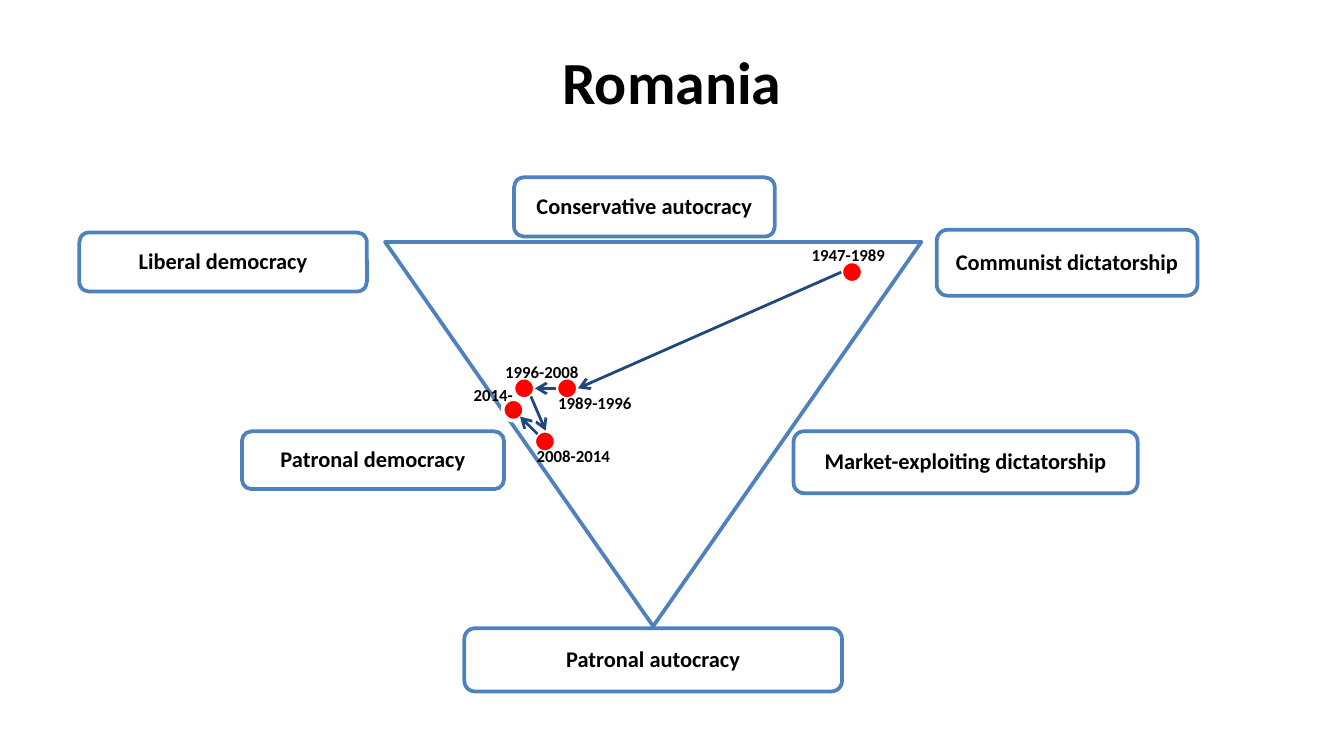
from lxml.etree import SubElement
from pptx import Presentation
from pptx.dml.color import RGBColor
from pptx.enum.shapes import MSO_CONNECTOR, MSO_SHAPE as SHAPE
from pptx.enum.text import MSO_ANCHOR as ANCHOR, MSO_AUTO_SIZE as AUTO, PP_ALIGN as ALIGN
from pptx.oxml.ns import qn
from pptx.util import Pt

PX = 4572
COLORS = {"ink": "000000", "paper": "FFFFFF", "frame": "4F81BD", "dot": "FF0000", "arrow": "1F497D"}
REGIMES = [
    ("Communist dictatorship", 1394, 342, 388, 98),
    ("Liberal democracy", 118, 346, 428, 88),
    ("Patronal autocracy", 691, 935, 562, 94),
    ("Conservative autocracy", 765, 264, 388, 88),
    ("Market-exploiting dictatorship", 1181, 642, 512, 92),
    ("Patronal democracy", 360, 642, 390, 86),
]
DOTS = [(1252, 389), (828, 562), (764, 562), (795, 641), (748, 594)]
MOVES = [
    (1252, 405, 860, 578),
    (828, 578, 796, 578),
    (790, 590, 812, 641),
    (800, 646, 774, 620),
]
PERIODS = [
    ("1947-1989", 1188, 354),
    ("1989-1996", 811, 575),
    ("1996-2008", 732, 528),
    ("2014-", 685, 563),
    ("2008-2014", 779, 654),
]


def emu(*lengths):
    return [n * PX for n in lengths]


def rgb(name):
    return RGBColor.from_string(COLORS[name])


def write(tf, text, size=12, align=ALIGN.CENTER, anchor=ANCHOR.MIDDLE, inset=None, spacing=None):
    tf.word_wrap = True
    tf.vertical_anchor = anchor
    if inset is not None:
        tf.margin_left = tf.margin_right = tf.margin_top = tf.margin_bottom = inset * PX
    p = tf.paragraphs[0]
    p.alignment = align
    p.line_spacing = spacing
    r = p.add_run()
    r.text = text
    r.font.name, r.font.size, r.font.bold = "Calibri", Pt(size), True
    r.font.color.rgb = rgb("ink")


class Diagram:
    """Style and current slide, with one method per kind of element."""

    def __init__(self, prs):
        self.s = prs.slides.add_slide(prs.slide_layouts[5])

    def title(self, text, x, y, w, h):
        sp = self.s.shapes.title
        sp.left, sp.top, sp.width, sp.height = emu(x, y, w, h)
        write(sp.text_frame, text, size=32)

    def shape(self, kind, x, y, w, h, fill=None, line="frame"):
        sp = self.s.shapes.add_shape(kind, *emu(x, y, w, h))
        sp.shadow.inherit = False
        if fill:
            sp.fill.solid()
            sp.fill.fore_color.rgb = rgb(fill)
        else:
            sp.fill.background()
        sp.line.color.rgb = rgb(line)
        sp.line.width = Pt(2)
        return sp

    def triangle(self, x, y, w, h):
        self.shape(SHAPE.ISOSCELES_TRIANGLE, x, y, w, h).rotation = 180

    def box(self, text, x, y, w, h):
        sp = self.shape(SHAPE.ROUNDED_RECTANGLE, x, y, w, h, fill="paper")
        color = sp.element.spPr.find(qn("a:solidFill"))[0]
        SubElement(color, qn("a:alpha"), val="90000")
        write(sp.text_frame, text, inset=10, spacing=0.9)

    def dot(self, x, y):
        self.shape(SHAPE.OVAL, x, y, 32, 32, fill="dot", line="paper")

    def arrow(self, x1, y1, x2, y2):
        c = self.s.shapes.add_connector(MSO_CONNECTOR.STRAIGHT, *emu(x1, y1, x2, y2))
        c.line.color.rgb = rgb("arrow")
        c.line.width = Pt(1.5)
        spPr = c.element.spPr
        SubElement(spPr.find(qn("a:ln")), qn("a:tailEnd"), type="arrow")
        SubElement(spPr, qn("a:effectLst"))

    def label(self, text, x, y):
        tf = self.s.shapes.add_textbox(*emu(x, y, 204, 50)).text_frame
        write(tf, text, size=9, align=ALIGN.LEFT, anchor=ANCHOR.TOP)
        tf.auto_size = AUTO.SHAPE_TO_FIT_TEXT


def main():
    prs = Presentation()
    prs.slide_width, prs.slide_height = emu(2000, 1125)
    d = Diagram(prs)
    d.title("Romania", 0, 43, 2000, 154)
    d.triangle(573, 360, 798, 572)
    for draw, items in ((d.box, REGIMES), (d.dot, DOTS), (d.arrow, MOVES), (d.label, PERIODS)):
        for item in items:
            draw(*item)
    prs.save("out.pptx")


if __name__ == "__main__":
    main()
